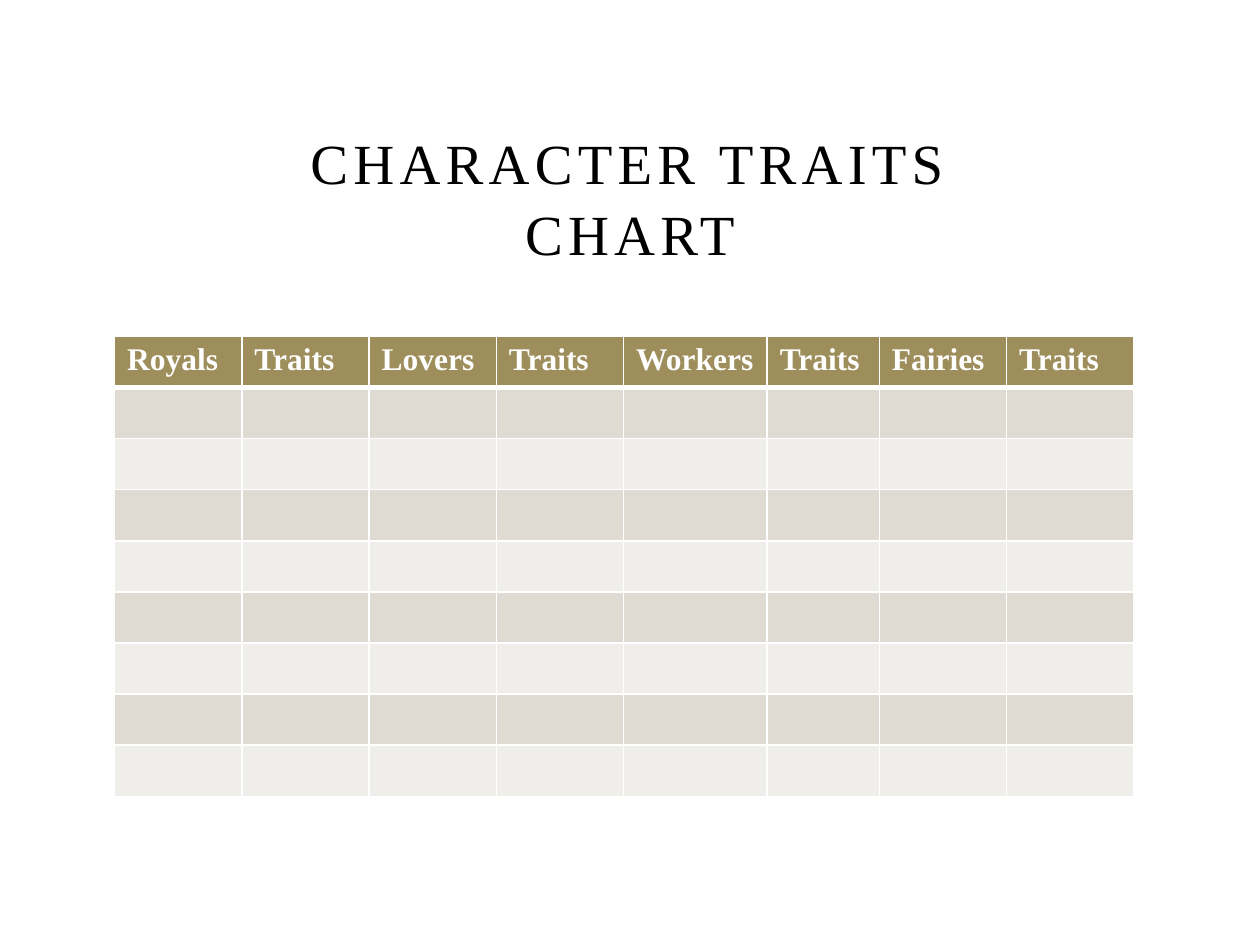
import pptx
from pptx.dml.color import RGBColor
from pptx.enum.text import MSO_ANCHOR, MSO_AUTO_SIZE, PP_ALIGN
from pptx.oxml import parse_xml
from pptx.oxml.ns import nsdecls
from pptx.util import Inches, Pt

TITLE = "CHARACTER TRAITS CHART"
HEADS = ["Royals", "Traits", "Lovers", "Traits",
         "Workers", "Traits", "Fairies", "Traits"]
WIDTHS = [1.01, 1.01, 1.01, 1.01, 1.14, 0.89, 1.01, 1.01]
ROWS = 9

FONT = "Times New Roman"
BLACK = RGBColor(0x00, 0x00, 0x00)
WHITE = RGBColor(0xFF, 0xFF, 0xFF)
OLIVE = RGBColor(0x9E, 0x8E, 0x5C)
BANDS = [RGBColor(0xF0, 0xEE, 0xEA), RGBColor(0xDF, 0xDB, 0xD2)]


def style(font, size, color, bold):
    font.name, font.size, font.bold = FONT, Pt(size), bold
    font.color.rgb = color


def add_edges(cell, top, bottom):
    """Draw the cell's white borders; top and bottom are widths in points."""
    props = cell._tc.get_or_add_tcPr()
    edges = [("lnL", 1), ("lnR", 1), ("lnT", top), ("lnB", bottom)]
    for tag, width in edges:
        props.append(parse_xml(
            f'<a:{tag} {nsdecls("a")} w="{Pt(width)}"><a:solidFill>'
            f'<a:srgbClr val="{WHITE}"/></a:solidFill></a:{tag}>'))


def add_title(slide):
    title = slide.shapes.title
    title.left, title.top = Inches(1.5), Inches(1.42)
    title.width, title.height = Inches(7), Inches(0.75)
    frame = title.text_frame
    frame.text = TITLE
    frame.word_wrap = True
    frame.auto_size = MSO_AUTO_SIZE.NONE
    frame.vertical_anchor = MSO_ANCHOR.BOTTOM
    para = frame.paragraphs[0]
    para.alignment = PP_ALIGN.CENTER
    para.line_spacing = 1.05
    style(para.font, 32.4, BLACK, False)
    para.runs[0].font._element.set("spc", "300")


def add_grid(slide):
    table = slide.shapes.add_table(
        ROWS, len(HEADS), Inches(0.91), Inches(2.67),
        Inches(sum(WIDTHS)), Inches(3.65)).table
    for col, width in zip(table.columns, WIDTHS):
        col.width = Inches(width)
    for row in range(ROWS):
        for col, head in enumerate(HEADS):
            cell = table.cell(row, col)
            add_edges(cell, 3 if row == 1 else 1, 3 if row == 0 else 1)
            cell.fill.solid()
            cell.fill.fore_color.rgb = BANDS[row % 2] if row else OLIVE
            if row == 0:
                cell.text = head
            style(cell.text_frame.paragraphs[0].font, 18,
                  BLACK if row else WHITE, row == 0)


def main():
    deck = pptx.Presentation()
    deck.slide_width, deck.slide_height = Inches(10), Inches(7.5)
    slide = deck.slides.add_slide(deck.slide_layouts[5])
    add_title(slide)
    add_grid(slide)
    deck.save("out.pptx")


if __name__ == "__main__":
    main()
